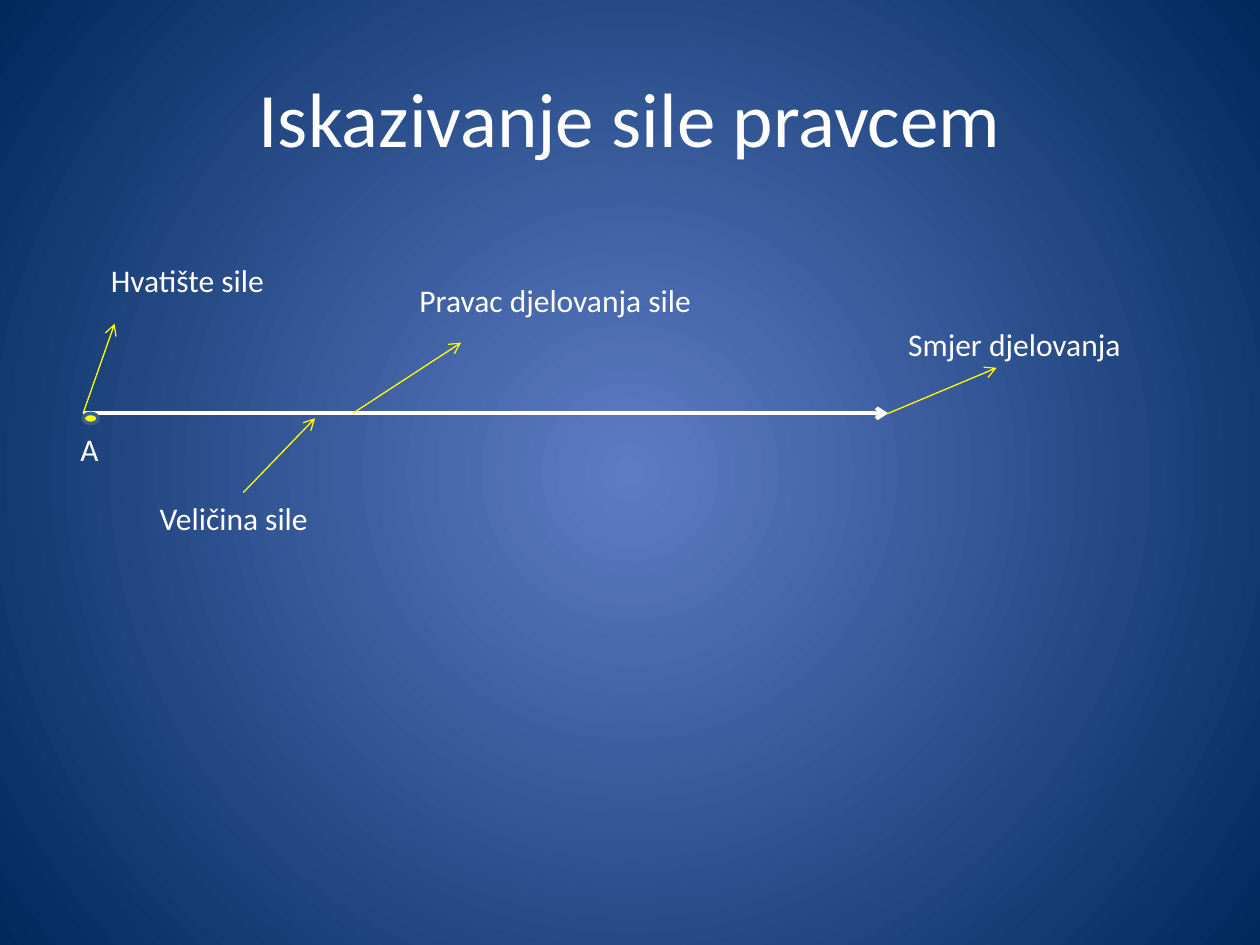
from dataclasses import dataclass

from lxml.etree import SubElement
from pptx import Presentation
from pptx.dml.color import RGBColor
from pptx.enum.shapes import MSO_CONNECTOR, MSO_SHAPE
from pptx.enum.text import MSO_ANCHOR, MSO_AUTO_SIZE, PP_ALIGN
from pptx.oxml.ns import qn
from pptx.util import Pt


@dataclass(frozen=True)
class Theme:
    font: str = "Calibri"
    title_size: int = 44
    label_size: int = 18
    text: RGBColor = RGBColor(0xFF, 0xFF, 0xFF)
    accent: RGBColor = RGBColor(0xFF, 0xFF, 0x00)
    dot_line: RGBColor = RGBColor(0x3A, 0x5F, 0x8C)
    bg_center: RGBColor = RGBColor(0x5E, 0x7C, 0xC5)
    bg_edge: RGBColor = RGBColor(0x00, 0x29, 0x5C)


THEME = Theme()
LABEL_HEIGHT = 29
FORCE_START = (47.5, 236.2)
FORCE_END = (507.6, 236.2)


def set_radial_background(s):
    fill = s.background.fill
    fill.gradient()
    for stop, color in zip(fill.gradient_stops, (THEME.bg_center, THEME.bg_edge)):
        stop.color.rgb = color
    grad = s.element.find(".//" + qn("a:gradFill"))
    grad.remove(grad.find(qn("a:lin")))
    path = SubElement(grad, qn("a:path"), path="circle")
    SubElement(path, qn("a:fillToRect"), dict.fromkeys("ltrb", "50000"))


def add_run(p, text, size):
    r = p.add_run()
    r.text = text
    r.font.name = THEME.font
    r.font.size = Pt(size)
    r.font.color.rgb = THEME.text


def set_title(s, text):
    sp = s.shapes.title
    sp.left, sp.top, sp.width, sp.height = Pt(36), Pt(21.6), Pt(648), Pt(90)
    tf = sp.text_frame
    tf.vertical_anchor = MSO_ANCHOR.MIDDLE
    p = tf.paragraphs[0]
    p.alignment = PP_ALIGN.CENTER
    add_run(p, text, THEME.title_size)


def add_label(s, text, left, top, width):
    sp = s.shapes.add_textbox(Pt(left), Pt(top), Pt(width), Pt(LABEL_HEIGHT))
    tf = sp.text_frame
    tf.word_wrap = True
    tf.auto_size = MSO_AUTO_SIZE.SHAPE_TO_FIT_TEXT
    add_run(tf.paragraphs[0], text, THEME.label_size)


def add_arrow(s, start, end, color=THEME.accent, width=0.75):
    sp = s.shapes.add_connector(MSO_CONNECTOR.STRAIGHT, *map(Pt, start + end))
    sp.line.color.rgb = color
    sp.line.width = Pt(width)
    SubElement(sp.line._get_or_add_ln(), qn("a:tailEnd"), type="arrow")
    SubElement(sp.element.spPr, qn("a:effectLst"))


def add_point(s, left, top):
    sp = s.shapes.add_shape(MSO_SHAPE.FLOWCHART_CONNECTOR,
                            Pt(left), Pt(top), Pt(8.6), Pt(5.8))
    sp.shadow.inherit = False
    sp.fill.solid()
    sp.fill.fore_color.rgb = THEME.accent
    sp.line.color.rgb = THEME.dot_line
    sp.line.width = Pt(2)


def main():
    prs = Presentation()
    prs.slide_width, prs.slide_height = Pt(720), Pt(540)
    s = prs.slides.add_slide(prs.slide_layouts.get_by_name("Title Only"))
    set_radial_background(s)
    set_title(s, "Iskazivanje sile pravcem")

    add_arrow(s, FORCE_START, FORCE_END, THEME.text, 2.25)
    for start, end in (
        (FORCE_START, (65.5, 185)),
        ((201.6, 236.2), (263.5, 195.8)),
        (FORCE_END, (569.5, 210.2)),
        ((139, 281.5), (180, 239)),
    ):
        add_arrow(s, start, end)
    add_point(s, *FORCE_START)

    for label in (
        ("Hvatište sile", 56.2, 145.4, 123.8),
        ("Pravac djelovanja sile", 232.6, 157, 239.8),
        ("A", 38.9, 241.9, 45.4),
        ("Smjer djelovanja", 511.9, 182.2, 137.5),
        ("Veličina sile", 84.2, 281.5, 213.1),
    ):
        add_label(s, *label)

    prs.save("out.pptx")


if __name__ == "__main__":
    main()
